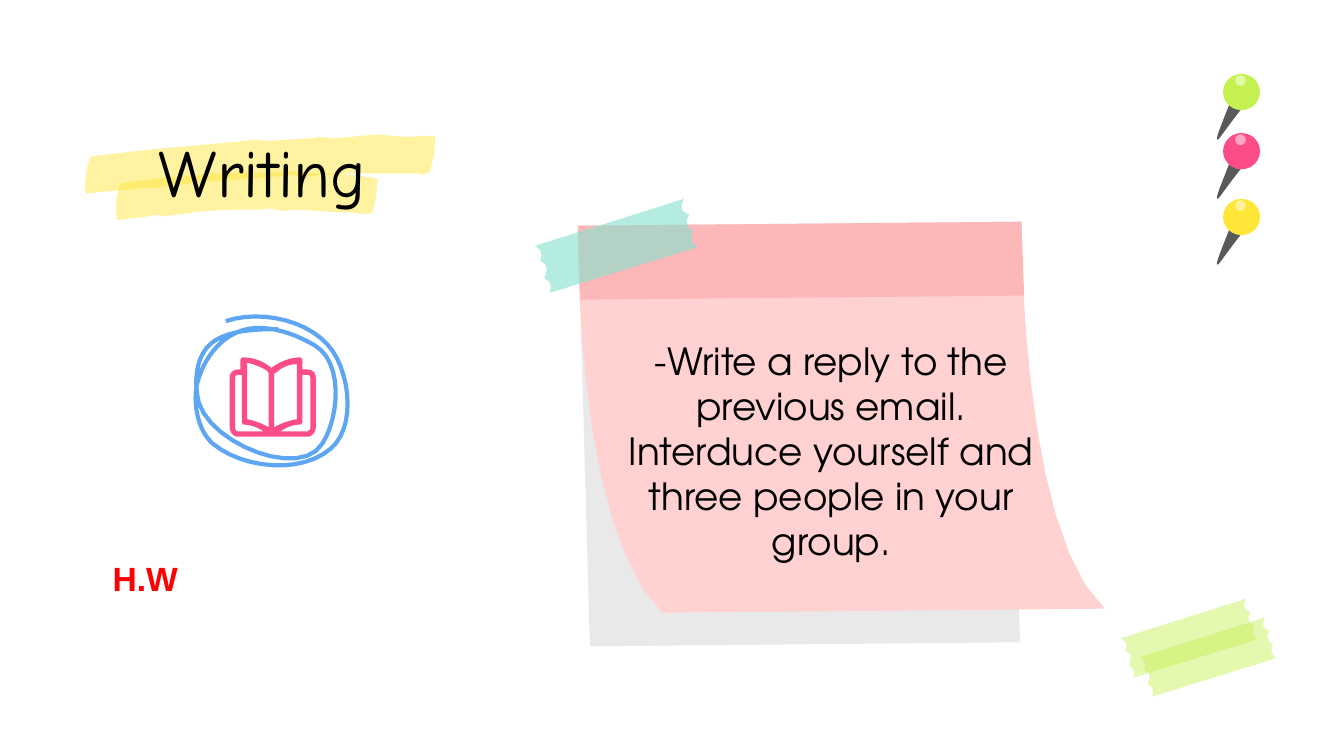
from dataclasses import dataclass

from lxml.etree import SubElement
from pptx import Presentation
from pptx.dml.color import RGBColor
from pptx.enum.shapes import MSO_SHAPE
from pptx.enum.text import MSO_ANCHOR, PP_ALIGN
from pptx.oxml.ns import qn
from pptx.util import Cm, Pt


@dataclass(frozen=True)
class Theme:
    black: str = "000000"
    white: str = "FFFFFF"
    red: str = "FF0000"
    yellow: str = "FFE638"
    pink: str = "FD4D89"
    lime: str = "C4F150"
    mint: str = "89E1D0"
    blue: str = "5EA5F2"
    needle: str = "595959"
    shadow: str = "D9D9D9"
    page: str = "FFD1D1"
    band: str = "FCB8B8"
    title_size: int = 36
    body_size: int = 20
    label_size: int = 18
    stroke: float = 2.25


theme = Theme()
unit = Cm(2.54) / 100

deck = Presentation()
deck.slide_width = Cm(25.4)
deck.slide_height = Cm(14.29)
slide = deck.slides.add_slide(deck.slide_layouts[6])
shapes = slide.shapes


def draw(contours, fill=None, opacity=100, line=None, oval=None):
    if oval:
        shape = shapes.add_shape(MSO_SHAPE.OVAL, *(round(v * unit) for v in oval))
    else:
        builder = None
        for start, *steps in contours:
            x, y = start
            points = []
            for step in steps:
                if len(step) == 2:
                    points.append(step)
                else:
                    x1, y1, x2, y2, x3, y3 = step
                    for i in range(1, 13):
                        t = i / 12
                        a, b, c, d = (1 - t) ** 3, 3 * t * (1 - t) ** 2, 3 * t * t * (1 - t), t ** 3
                        points.append((a * x + b * x1 + c * x2 + d * x3, a * y + b * y1 + c * y2 + d * y3))
                x, y = step[-2:]
            origin = [round(v * unit) for v in start]
            if builder is None:
                builder = shapes.build_freeform(*origin)
            else:
                builder.move_to(*origin)
            builder.add_line_segments([(px * unit, py * unit) for px, py in points], close=fill is not None)
        shape = builder.convert_to_shape()
    shape.shadow.inherit = False
    if fill:
        shape.fill.solid()
        shape.fill.fore_color.rgb = RGBColor.from_string(fill)
        if opacity < 100:
            color = shape.element.spPr.find(qn("a:solidFill"))[0]
            SubElement(color, qn("a:alpha"), val=str(opacity * 1000))
    else:
        shape.fill.background()
    if line:
        shape.line.color.rgb = RGBColor.from_string(line)
        shape.line.width = Pt(theme.stroke)
    else:
        shape.line.fill.background()


def write(text, left, top, width, height, *, font, size, color, bold=False,
          align=PP_ALIGN.LEFT, anchor=MSO_ANCHOR.TOP, spacing=1.0, inset=0.25):
    box = shapes.add_textbox(Cm(left), Cm(top), Cm(width), Cm(height))
    frame = box.text_frame
    frame.word_wrap = True
    frame.vertical_anchor = anchor
    frame.margin_left = frame.margin_right = Cm(0.25)
    frame.margin_top = frame.margin_bottom = Cm(inset)
    paragraph = frame.paragraphs[0]
    paragraph.alignment = align
    paragraph.line_spacing = spacing
    run = paragraph.add_run()
    run.text = text
    run.font.name = font
    run.font.size = Pt(size)
    run.font.bold = bold
    run.font.color.rgb = RGBColor.from_string(color)


upper_stroke = [
    (281, 100), (249, 103), (239, 102), (232, 103), (197, 105), (193, 104), (115, 111), (71, 116),
    (67, 117), (65, 124), (63, 138), (64, 144), (107, 140), (112, 140), (155, 135), (160, 135),
    (211, 131), (217, 130), (225, 132), (231, 131), (260, 129), (310, 129), (315, 130), (320, 128),
    (323, 115), (324, 102), (319, 101), (302, 102),
]
lower_stroke = [
    (216, 127), (206, 128), (186, 129), (183, 128), (125, 132), (92, 136), (89, 137), (86, 152),
    (87, 164), (118, 160), (122, 161), (153, 157), (176, 156), (196, 156), (200, 155), (211, 157),
    (221, 156), (251, 158), (261, 158), (269, 159), (277, 159), (280, 145), (281, 133), (268, 131),
    (251, 129), (238, 129), (221, 128),
]
for marker_stroke in (upper_stroke, lower_stroke):
    draw([marker_stroke], theme.yellow, 47)

draw([[(751, 233), (432, 236), (439, 481), (759, 478)]], theme.shadow, 56)
draw([[(760, 165), (430, 168), (430, 168, 427, 395, 493, 456), (822, 453),
       (759, 395, 760, 165, 760, 165)]], theme.page)
draw([[(760, 165), (430, 168), (432, 223), (762, 220)]], theme.band)

write("-Write a reply to the previous email. Interduce yourself and three people in your group.",
      11.61, 6.15, 8.2, 5.28, font="TeX Gyre Adventor", size=theme.body_size,
      color=theme.black, align=PP_ALIGN.CENTER)
write("Writing", 1.93, 2.57, 6.07, 1.6, font="Comic Neue", size=theme.title_size,
      color=theme.black, align=PP_ALIGN.CENTER, anchor=MSO_ANCHOR.MIDDLE, spacing=0.8)

left_page = [(184, 270), (189, 271, 194, 273, 199, 276), (200, 278), (200, 318), (195, 315, 189, 313, 184, 312)]
right_page = [(221, 271), (221, 312), (215, 313, 209, 315, 204, 318), (204, 278), (206, 277),
              (210, 273, 216, 271, 221, 271)]
left_cover = [(180, 279), (180, 314), (180, 315, 181, 316, 181, 316), (186, 316, 192, 318, 196, 321),
              (177, 321), (176, 321, 175, 320, 175, 318), (175, 281), (175, 280, 176, 279, 177, 279)]
right_cover = [(229, 279), (230, 279, 231, 280, 231, 281), (231, 318), (231, 320, 230, 320, 229, 321),
               (209, 321), (213, 318, 218, 316, 223, 316), (224, 316, 225, 315, 225, 314), (225, 279)]
book_edge = [(181, 266), (180, 266, 179, 267, 179, 268), (179, 275), (177, 275),
             (174, 275, 171, 277, 171, 281), (171, 318), (171, 322, 174, 325, 177, 325), (229, 325),
             (232, 325, 235, 322, 235, 318), (235, 281), (235, 277, 232, 275, 229, 275), (225, 275),
             (225, 268), (225, 267, 224, 266, 223, 266), (216, 266, 209, 269, 203, 273), (202, 274),
             (201, 273), (196, 269, 189, 266, 181, 266)]
draw([left_page, right_page, left_cover, right_cover, book_edge], theme.pink)

scribble = [(207, 245), (187, 245, 160, 246, 151, 263), (145, 274, 145, 288, 148, 300),
            (158, 331, 224, 357, 240, 330), (253, 309, 255, 269, 234, 257),
            (217, 247, 193, 239, 175, 248), (160, 255, 149, 272, 146, 289),
            (144, 303, 148, 321, 158, 330), (181, 349, 224, 353, 246, 334),
            (264, 319, 261, 282, 248, 262), (233, 239, 195, 230, 168, 239)]
draw([scribble], line=theme.blue)

torn_tape = [(0, 0), (4, 3), (5, 7), (4, 11), (8, 14), (9, 18), (7, 24), (11, 27), (12, 31), (11, 35),
             (121, 1), (117, -3), (117, -8), (118, -11), (114, -14), (113, -19), (115, -23),
             (110, -26), (109, -30), (111, -35)]
for left, top, scale, color, opacity in (
    (398, 183, 1, theme.mint, 62),
    (834, 475, 0.84, theme.lime, 45),
    (848, 489, 0.84, theme.lime, 45),
):
    draw([[(left + x * scale, top + y * scale) for x, y in torn_tape]], color, opacity)

for top, color in ((148, theme.yellow), (99, theme.pink), (55, theme.lime)):
    draw([[(915, top + 22), (908, top + 40, 904, top + 49, 906, top + 49),
           (907, top + 49, 912, top + 41, 923, top + 27)]], theme.needle)
    draw(None, color, oval=(910, top, 27.5, 27))
    draw(None, theme.white, 50, oval=(919, top + 1, 8, 8))

write("H.W", 1.88, 10.41, 3.28, 1.02, font="Arial", size=theme.label_size,
      color=theme.red, bold=True, inset=0.13)

deck.save("out.pptx")
